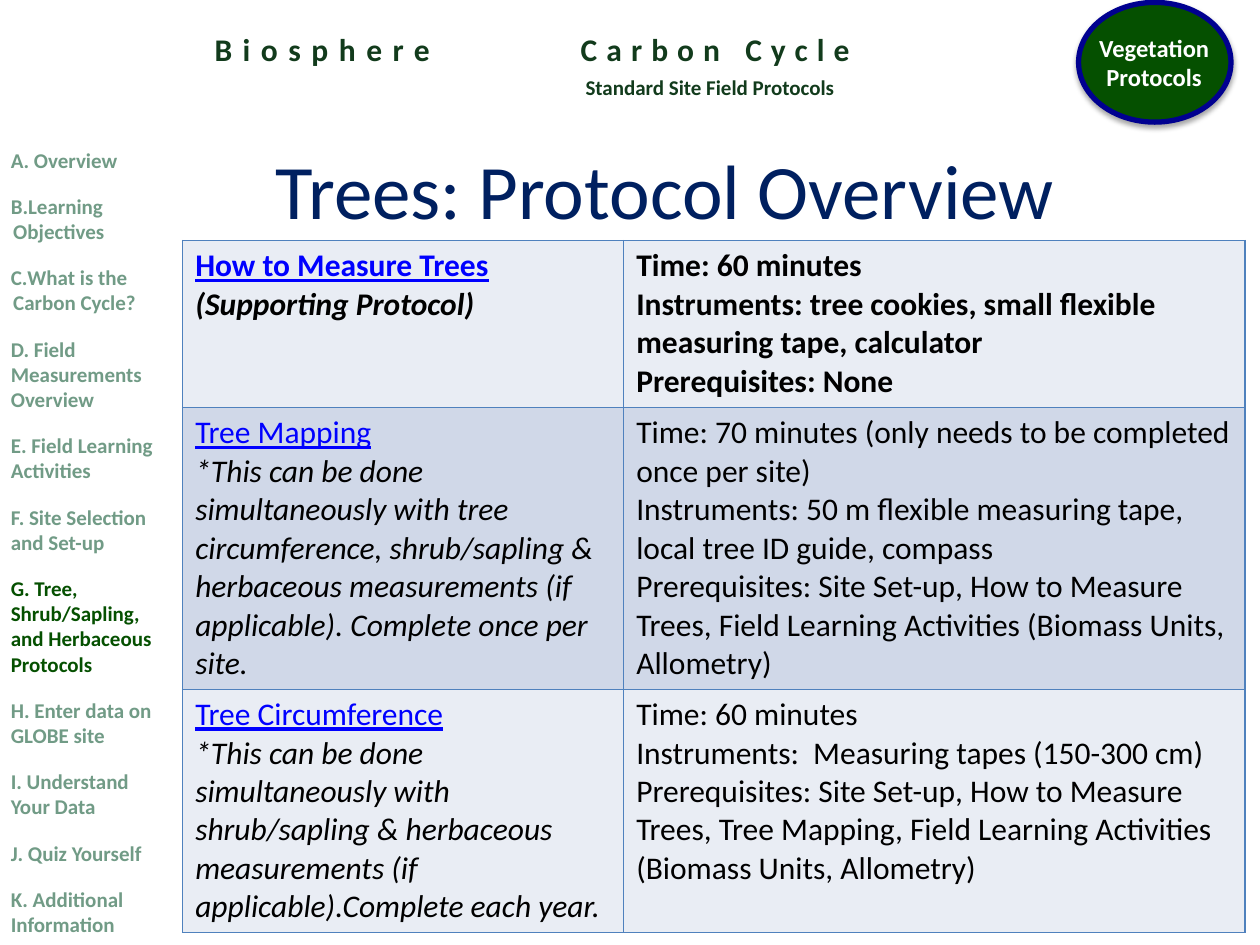
from lxml.etree import SubElement
from pptx import Presentation
from pptx.dml.color import RGBColor
from pptx.enum.shapes import MSO_SHAPE
from pptx.enum.text import MSO_ANCHOR, PP_ALIGN
from pptx.oxml import parse_xml
from pptx.oxml.ns import nsdecls, qn
from pptx.util import Pt


def rgb(hex_color):
    return RGBColor.from_string(hex_color)


def add_text(shapes, box, lines, size, color, bold=True, align=PP_ALIGN.LEFT):
    tf = shapes.add_textbox(*[Pt(v) for v in box]).text_frame
    tf.word_wrap = True
    tf.text = "\n".join(lines)
    for p in tf.paragraphs:
        p.alignment = align
        for r in p.runs:
            r.font.name = "Calibri"
            r.font.size = Pt(size)
            r.font.bold = bold
            r.font.color.rgb = rgb(color)
    return tf


prs = Presentation()
prs.slide_width = Pt(720)
prs.slide_height = Pt(540)
s = prs.slides.add_slide(prs.slide_layouts[6])

tf = add_text(s.shapes, (1.4, 13.7, 720, 29), [""], 18, "123B1C")
p = tf.paragraphs[0]
tabs = SubElement(p._p.get_or_add_pPr(), qn("a:tabLst"))
for pos in (114.2, 323.4):
    SubElement(tabs, qn("a:tab"), pos=str(Pt(pos)), algn="l")
for text, spacing in (("\tBiosphere", 600), ("\tCarbon Cycle", 520)):
    r = p.add_run()
    r.text = text
    r.font.name = "Calibri"
    r.font.size = Pt(18)
    r.font.bold = True
    r.font.color.rgb = rgb("123B1C")
    r.font._element.set("spc", str(spacing))

badge = s.shapes.add_group_shape()
sp = badge.shapes.add_shape(MSO_SHAPE.OVAL, Pt(616.3), Pt(1.4), Pt(87.1), Pt(68.4))
sp.fill.solid()
sp.fill.fore_color.rgb = rgb("055000")
sp.line.color.rgb = rgb("000090")
sp.line.width = Pt(3)
sp.shadow.inherit = False
effects = sp._element.spPr.find(qn("a:effectLst"))
shadow = SubElement(effects, qn("a:outerShdw"), blurRad=str(Pt(3.1)), dist=str(Pt(1.8)),
                    dir="5400000", rotWithShape="0")
SubElement(SubElement(shadow, qn("a:srgbClr"), val="000000"), qn("a:alpha"), val="35000")
add_text(badge.shapes, (619.2, 15.1, 80.6, 41), ["Vegetation Protocols"], 14, "FFFFFF",
         align=PP_ALIGN.CENTER)

menu = [
    " Overview",
    "Learning Objectives",
    "What is the Carbon Cycle?",
    "D. Field Measurements Overview",
    "E. Field Learning Activities",
    "F. Site Selection and Set-up",
    "G. Tree, Shrub/Sapling, and Herbaceous Protocols",
    "H. Enter data on GLOBE site",
    "I. Understand Your Data",
    "J. Quiz Yourself",
    "K. Additional Information",
]
tf = add_text(s.shapes, (-0.9, 80.6, 102.2, 463), menu, 12, "719B86")
for i, p in enumerate(tf.paragraphs):
    p.space_after = Pt(12)
    if i < 3:
        pPr = p._p.get_or_add_pPr()
        pPr.set("marL", str(Pt(1.4)))
        pPr.set("indent", str(-Pt(1.4)))
        SubElement(pPr, qn("a:buFont"), typeface="+mj-lt")
        SubElement(pPr, qn("a:buAutoNum"), type="alphaUcPeriod")
    if p.text.startswith("G."):
        p.runs[0].font.color.rgb = rgb("055000")

add_text(s.shapes, (227.5, 38.9, 356.4, 21.6), ["Standard Site Field Protocols"], 12, "123B1C",
         align=PP_ALIGN.CENTER)
tf = add_text(s.shapes, (104.4, 77, 551.5, 61.2), ["Trees: Protocol Overview"], 44, "002060",
              bold=False, align=PP_ALIGN.CENTER)
tf.vertical_anchor = MSO_ANCHOR.MIDDLE

protocols = [
    (["How to Measure Trees",
      "(Supporting Protocol)"],
     ["Time: 60 minutes",
      "Instruments: tree cookies, small flexible measuring tape, calculator",
      "Prerequisites: None"]),
    (["Tree Mapping",
      "*This can be done simultaneously with tree circumference, shrub/sapling & herbaceous "
      "measurements (if applicable). Complete once per site."],
     ["Time: 70 minutes (only needs to be completed once per site)",
      "Instruments: 50 m flexible measuring tape, local tree ID guide, compass",
      "Prerequisites: Site Set-up, How to Measure Trees, Field Learning Activities "
      "(Biomass Units, Allometry)"]),
    (["Tree Circumference",
      "*This can be done simultaneously with shrub/sapling & herbaceous measurements "
      "(if applicable).Complete each year."],
     ["Time: 60 minutes",
      "Instruments:  Measuring tapes (150-300 cm)",
      "Prerequisites: Site Set-up, How to Measure Trees, Tree Mapping, Field Learning Activities "
      "(Biomass Units, Allometry)"]),
]
table = s.shapes.add_table(3, 2, Pt(104.4), Pt(137.5), Pt(607), Pt(395.5)).table
for col, width in zip(table.columns, (252, 355)):
    col.width = Pt(width)
for row, height in zip(table.rows, (95.4, 161, 139.1)):
    row.height = Pt(height)
for i, row in enumerate(protocols):
    for j, lines in enumerate(row):
        cell = table.cell(i, j)
        tcPr = cell._tc.get_or_add_tcPr()
        for side in ("lnL", "lnR", "lnT", "lnB"):
            tcPr.append(parse_xml(
                f'<a:{side} {nsdecls("a")} w="12700"><a:solidFill>'
                f'<a:srgbClr val="4F81BD"/></a:solidFill></a:{side}>'))
        cell.fill.solid()
        cell.fill.fore_color.rgb = rgb("D0D8E8" if i % 2 else "E9EDF4")
        cell.text_frame.text = "\n".join(lines)
        for k, p in enumerate(cell.text_frame.paragraphs):
            is_name = j == 0 and k == 0
            f = p.runs[0].font
            f.name = "Calibri"
            f.size = Pt(18)
            f.bold = i == 0
            f.italic = j == 0 and k > 0
            f.underline = is_name
            f.color.rgb = rgb("0000FF" if is_name else "000000")

prs.save("out.pptx")
